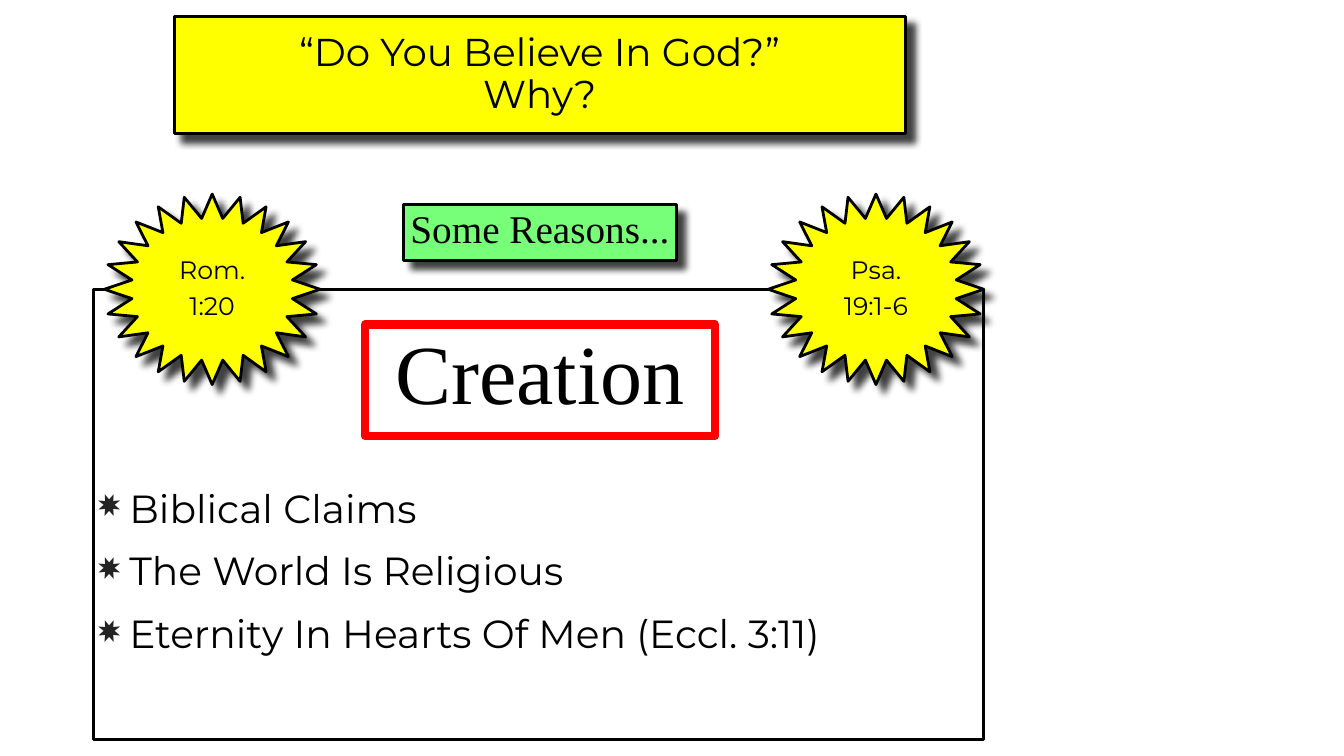
from dataclasses import dataclass
from typing import Optional

from lxml import etree
from pptx import Presentation
from pptx.dml.color import RGBColor
from pptx.enum.shapes import MSO_SHAPE
from pptx.enum.text import MSO_ANCHOR, PP_ALIGN
from pptx.oxml.ns import qn
from pptx.util import Pt

RECTANGLE, STAR = MSO_SHAPE.RECTANGLE, MSO_SHAPE.STAR_24_POINT
TOP, MIDDLE = MSO_ANCHOR.TOP, MSO_ANCHOR.MIDDLE
LEFT, CENTER = PP_ALIGN.LEFT, PP_ALIGN.CENTER
SANS, SERIF = "Montserrat", "Times New Roman"
COLORS = {
    "ink": "000000",
    "paper": "FFFFFF",
    "yellow": "FFFF00",
    "green": "77FF79",
    "red": "FF0000",
    "bullet": "232323",
}
INSET = 7.2
HANGING = 44.64
STAR_TOP, STAR_WIDTH, STAR_HEIGHT = 277.2, 308.16, 272.16
VERSE_HEIGHT = 123.84


@dataclass(frozen=True)
class TextStyle:
    size: float
    font: str = SANS
    spacing: float = 0.9
    before: float = 0
    first_before: float = 0
    align: PP_ALIGN = CENTER
    anchor: MSO_ANCHOR = MIDDLE
    wrap: bool = True
    top_inset: float = INSET
    bullet: str = ""


@dataclass(frozen=True)
class Box:
    left: float
    top: float
    width: float
    height: float
    fill: Optional[str] = None
    line: Optional[str] = "ink"
    line_width: float = 4
    shadow: bool = False
    kind: MSO_SHAPE = RECTANGLE
    paragraphs: tuple[str, ...] = ()
    style: Optional[TextStyle] = None


@dataclass(frozen=True)
class Verse:
    star_left: float
    text_width: float
    lines: tuple[str, str]


TITLE = TextStyle(55.4)
REASONS = TextStyle(56, SERIF, anchor=TOP, wrap=False)
VERSE = TextStyle(36, before=12, first_before=12, wrap=False)
HEADING = TextStyle(120, SERIF, 0.8, wrap=False)
CLAIMS = TextStyle(56, spacing=0.8, before=36, align=LEFT, anchor=TOP,
                   top_inset=291, bullet="✸")

BOXES = (
    Box(249.12, 23.04, 1044, 167.76, "yellow", shadow=True,
        paragraphs=("“Do You Believe In God?”\nWhy?",), style=TITLE),
    Box(133.2, 413.28, 1272.24, 643.68, "paper", style=CLAIMS,
        paragraphs=("Biblical Claims", "The World Is Religious",
                    "Eternity In Hearts Of Men (Eccl. 3:11)")),
    Box(576.72, 292.32, 389.52, 79.92, "green", shadow=True,
        paragraphs=("Some Reasons...",), style=REASONS),
)
VERSES = (
    Verse(149.04, 126, ("Rom.", "1:20")),
    Verse(1097.28, 135.36, ("Psa.", "19:1-6")),
)
CREATION = Box(521.28, 463.68, 500.4, 159.12, line="red", line_width=12,
               paragraphs=(" Creation ",), style=HEADING)


def rgb(name: str) -> RGBColor:
    """Return a named colour."""
    return RGBColor.from_string(COLORS[name])


def set_values(target, values: dict) -> None:
    """Set attributes from a dict of format values."""
    for name, value in values.items():
        setattr(target, name, value)


def add_shadow(shape) -> None:
    """Give a shape a soft shadow to the lower right."""
    effects = shape._element.spPr.find(qn("a:effectLst"))
    shadow = etree.SubElement(effects, qn("a:outerShdw"), blurRad=str(Pt(10)),
                              dist=str(Pt(16)), dir="2700000", algn="ctr",
                              rotWithShape="0")
    color = etree.SubElement(shadow, qn("a:srgbClr"), val=COLORS["ink"])
    etree.SubElement(color, qn("a:alpha"), val="75000")


def add_bullet(paragraph, character: str) -> None:
    """Give a paragraph a hanging coloured bullet."""
    properties = paragraph._p.get_or_add_pPr()
    properties.set("marL", str(Pt(HANGING)))
    properties.set("indent", str(-Pt(HANGING)))
    color = etree.SubElement(properties, qn("a:buClr"))
    etree.SubElement(color, qn("a:srgbClr"), val=COLORS["bullet"])
    etree.SubElement(properties, qn("a:buChar"), char=character)


def write_text(shape, texts: tuple[str, ...], style: TextStyle) -> None:
    """Write styled paragraphs into a shape."""
    frame = shape.text_frame
    set_values(frame, {
        "word_wrap": style.wrap, "vertical_anchor": style.anchor,
        "margin_left": Pt(INSET), "margin_right": Pt(INSET),
        "margin_top": Pt(style.top_inset), "margin_bottom": Pt(INSET),
    })
    for index, text in enumerate(texts):
        paragraph = frame.add_paragraph() if index else frame.paragraphs[0]
        before = style.before if index else style.first_before
        set_values(paragraph, {"alignment": style.align,
                               "line_spacing": style.spacing,
                               "space_before": Pt(before)})
        if style.bullet:
            add_bullet(paragraph, style.bullet)
        for number, line in enumerate(text.split("\n")):
            if number:
                paragraph.add_line_break()
            run = paragraph.add_run()
            run.text = line
            set_values(run.font, {"size": Pt(style.size), "name": style.font})
            run.font.color.rgb = rgb("ink")


def draw_box(shapes, box: Box) -> None:
    """Draw a box with its fill, outline, shadow and text."""
    bounds = [Pt(value) for value in (box.left, box.top, box.width, box.height)]
    if box.fill or box.line:
        shape = shapes.add_shape(box.kind, *bounds)
        shape.shadow.inherit = False
        if box.fill:
            shape.fill.solid()
            shape.fill.fore_color.rgb = rgb(box.fill)
        else:
            shape.fill.background()
        shape.line.color.rgb = rgb(box.line)
        shape.line.width = Pt(box.line_width)
        if box.shadow:
            add_shadow(shape)
    else:
        shape = shapes.add_textbox(*bounds)
    if box.style:
        write_text(shape, box.paragraphs, box.style)


def draw_verse(shapes, verse: Verse) -> None:
    """Draw a star with a verse reference at its centre."""
    group = shapes.add_group_shape()
    draw_box(group.shapes, Box(verse.star_left, STAR_TOP, STAR_WIDTH, STAR_HEIGHT,
                               "yellow", shadow=True, kind=STAR))
    draw_box(group.shapes, Box(
        verse.star_left + (STAR_WIDTH - verse.text_width) / 2,
        STAR_TOP + (STAR_HEIGHT - VERSE_HEIGHT) / 2,
        verse.text_width, VERSE_HEIGHT, line=None,
        paragraphs=verse.lines, style=VERSE))


def main() -> None:
    """Build and save the slide."""
    presentation = Presentation()
    set_values(presentation, {"slide_width": Pt(1920), "slide_height": Pt(1080)})
    slide = presentation.slides.add_slide(presentation.slide_layouts[6])
    for box in BOXES:
        draw_box(slide.shapes, box)
    for verse in VERSES:
        draw_verse(slide.shapes, verse)
    draw_box(slide.shapes, CREATION)
    presentation.save("out.pptx")


if __name__ == "__main__":
    main()
